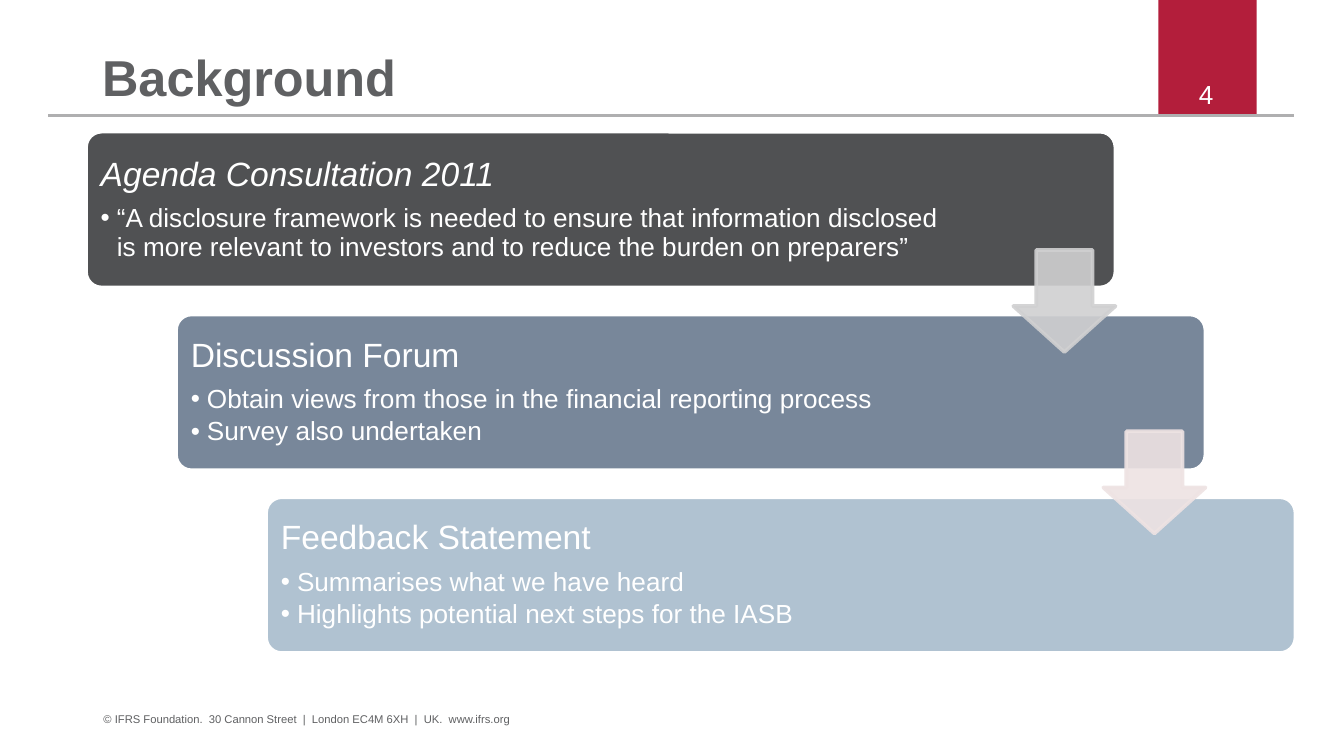
from lxml import etree
from pptx import Presentation
from pptx.dml.color import RGBColor
from pptx.enum.shapes import MSO_CONNECTOR as Connector, MSO_SHAPE as Shape
from pptx.enum.text import MSO_ANCHOR as Anchor, PP_ALIGN as Align
from pptx.oxml.ns import qn
from pptx.util import Inches, Pt

FONT = "Arial"
WHITE, GREY, RED, RULE = "FFFFFF", "5F6062", "B31E3B", "AFAFB0"
STAGE_WIDTH, STAGE_HEIGHT = 7.66, 1.16
STAGE_LEFT, STAGE_TOP = 0.64, 0.98
STEP_X, STEP_Y = 0.67, 1.36
ARROW_SIZE = 0.76
STAGES = [
    ("Agenda Consultation 2011", "505153", 6.4, True,
     ["“A disclosure framework is needed to ensure that information disclosed "
      "is more relevant to investors and to reduce the burden on preparers”"]),
    ("Discussion Forum", "78879A", 6.16, False,
     ["Obtain views from those in the financial reporting process",
      "Survey also undertaken"]),
    ("Feedback Statement", "B0C2D1", 6.16, False,
     ["Summarises what we have heard",
      "Highlights potential next steps for the IASB"]),
]
ARROW_COLORS = ["D0D0D1", "EEE3E3"]


def color(hex_value):
    return RGBColor.from_string(hex_value)


def place(shape, left, top, width, height):
    shape.left, shape.top = Inches(left), Inches(top)
    shape.width, shape.height = Inches(width), Inches(height)


def set_frame(shape, anchor=Anchor.TOP, inset=0):
    frame = shape.text_frame
    frame.word_wrap = True
    frame.vertical_anchor = anchor
    frame.margin_left = frame.margin_right = Inches(inset)
    frame.margin_top = frame.margin_bottom = Inches(inset)
    return frame


def add_bullet(paragraph, indent):
    properties = paragraph._p.get_or_add_pPr()
    properties.set("marL", str(Inches(indent)))
    properties.set("indent", str(-Inches(indent)))
    etree.SubElement(properties, qn("a:buFont")).set("typeface", FONT)
    etree.SubElement(properties, qn("a:buChar")).set("char", "•")


def write(paragraph, text, size, hex_value=WHITE, bold=False, italic=False,
          align=Align.LEFT, spacing=1.0, after=0, bullet=False):
    paragraph.alignment = align
    paragraph.line_spacing = spacing
    paragraph.space_before = Pt(0)
    paragraph.space_after = Pt(after)
    if bullet:
        paragraph.level = 1
        add_bullet(paragraph, 0.12)
    paragraph.font.size = Pt(size)
    run = paragraph.add_run()
    run.text = text
    font = run.font
    font.name, font.size = FONT, Pt(size)
    font.bold, font.italic = bold, italic
    font.color.rgb = color(hex_value)


def add_text_box(slide, left, top, width, height, **frame_format):
    box = slide.shapes.add_textbox(0, 0, 0, 0)
    place(box, left, top, width, height)
    return set_frame(box, **frame_format)


def add_filled(slide, kind, left, top, width, height, fill, line=None):
    shape = slide.shapes.add_shape(kind, 0, 0, 0, 0)
    place(shape, left, top, width, height)
    shape.shadow.inherit = False
    shape.fill.solid()
    shape.fill.fore_color.rgb = color(fill)
    if line:
        shape.line.color.rgb = color(line)
        shape.line.width = Pt(2)
    else:
        shape.line.fill.background()
    return shape


def add_header(slide, left, top, width, height):
    bottom = top + height
    add_filled(slide, Shape.RECTANGLE, left + 8.26, top, 0.73, height, RED)
    rule = slide.shapes.add_connector(
        Connector.STRAIGHT, Inches(left), Inches(bottom),
        Inches(left + width), Inches(bottom))
    rule.line.color.rgb = color(RULE)
    rule.line.width = Pt(1.2)
    etree.SubElement(rule._element.spPr, qn("a:effectLst"))
    number = add_text_box(slide, left + 8.27, top + 0.58, 0.69, 0.16)
    write(number.paragraphs[0], "4", 14, align=Align.CENTER)
    title = slide.shapes.title
    place(title, left + 0.4, top + 0.15, 7.41, 0.65)
    frame = set_frame(title, Anchor.BOTTOM)
    write(frame.paragraphs[0], "Background", 27, GREY, bold=True, spacing=0.9)


def add_stage(slide, left, top, heading, fill, text_width, italic, points):
    card = add_filled(slide, Shape.ROUNDED_RECTANGLE, left, top,
                      STAGE_WIDTH, STAGE_HEIGHT, fill, WHITE)
    card.adjustments[0] = 0.1
    frame = add_text_box(slide, left + 0.04, top + 0.03, text_width,
                         STAGE_HEIGHT - 0.06, anchor=Anchor.MIDDLE, inset=0.07)
    write(frame.paragraphs[0], heading, 18, italic=italic, spacing=0.9, after=6.3)
    for point in points:
        write(frame.add_paragraph(), point, 14, spacing=0.9, after=2.1, bullet=True)


def add_arrow(slide, left, top, fill):
    arrow = add_filled(slide, Shape.DOWN_ARROW, left, top,
                       ARROW_SIZE, ARROW_SIZE, fill, fill)
    arrow.adjustments[0], arrow.adjustments[1] = 0.55, 0.45
    for tint in arrow._element.spPr.iter(qn("a:srgbClr")):
        etree.SubElement(tint, qn("a:alpha")).set("val", "90000")


def add_staircase(slide, left, top):
    for index, stage in enumerate(STAGES):
        add_stage(slide, left + index * STEP_X, top + index * STEP_Y, *stage)
    for index, fill in enumerate(ARROW_COLORS):
        add_arrow(slide, left + STAGE_WIDTH - ARROW_SIZE + index * STEP_X,
                  top + 0.88 + index * 1.35, fill)


def add_footer(slide, left, top, width, height):
    frame = add_text_box(slide, left, top, width, height)
    write(frame.paragraphs[0],
          "© IFRS Foundation.  30 Cannon Street  |  London EC4M 6XH  |  UK.  www.ifrs.org",
          6, GREY)


def main():
    presentation = Presentation()
    presentation.slide_width = Inches(10)
    presentation.slide_height = Inches(10 * 9 / 16)
    slide = presentation.slides.add_slide(presentation.slide_layouts[5])
    add_header(slide, 0.36, 0, 9.27, 0.86)
    add_staircase(slide, STAGE_LEFT, STAGE_TOP)
    add_footer(slide, 0.77, 5.3, 6.18, 0.16)
    presentation.save("out.pptx")


if __name__ == "__main__":
    main()
